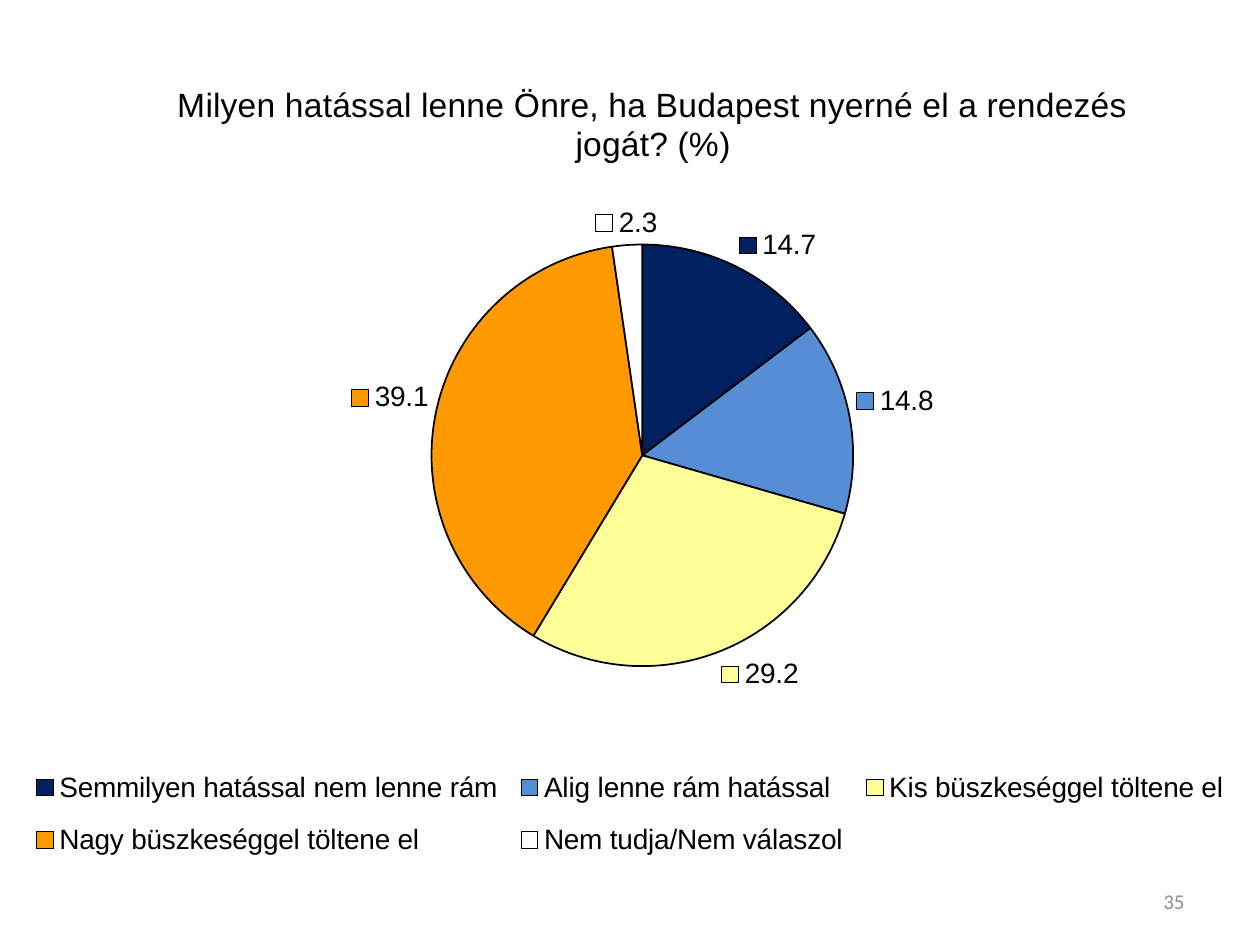
from lxml import etree
from pptx import Presentation
from pptx.chart.data import CategoryChartData
from pptx.dml.color import RGBColor
from pptx.enum.chart import XL_CHART_TYPE, XL_LABEL_POSITION, XL_LEGEND_POSITION
from pptx.enum.text import MSO_ANCHOR, PP_ALIGN
from pptx.oxml.ns import qn
from pptx.util import Cm, Pt

PIE = XL_CHART_TYPE.PIE
OUTSIDE_END = XL_LABEL_POSITION.OUTSIDE_END
BOTTOM = XL_LEGEND_POSITION.BOTTOM
MIDDLE = MSO_ANCHOR.MIDDLE
RIGHT = PP_ALIGN.RIGHT


def color(value):
    return RGBColor.from_string(value)


def place(element, index, **settings):
    for old_layout in element.findall(qn("c:layout")):
        element.remove(old_layout)
    layout = etree.Element(qn("c:layout"))
    manual = etree.SubElement(layout, qn("c:manualLayout"))
    for name, value in settings.items():
        etree.SubElement(manual, qn(f"c:{name}")).set("val", str(value))
    element.insert(index, layout)


answers = [
    ("Semmilyen hatással nem lenne rám", 14.7, "002060"),
    ("Alig lenne rám hatással", 14.8, "558ED5"),
    ("Kis büszkeséggel töltene el", 29.2, "FFFF99"),
    ("Nagy büszkeséggel töltene el", 39.1, "FF9900"),
    ("Nem tudja/Nem válaszol", 2.3, "FFFFFF"),
]

presentation = Presentation()
presentation.slide_width = Cm(25.4)
presentation.slide_height = Cm(19.05)
slide = presentation.slides.add_slide(presentation.slide_layouts[6])

number_box = slide.shapes.add_textbox(Cm(18.2), Cm(17.66), Cm(5.93), Cm(1.01))
text_frame = number_box.text_frame
text_frame.word_wrap = True
text_frame.vertical_anchor = MIDDLE
paragraph = text_frame.paragraphs[0]
paragraph.alignment = RIGHT
run = paragraph.add_run()
run.text = "35"
run.font.size = Pt(12)
run.font.name = "Calibri"
run.font.color.rgb = color("8C8C8C")

chart_data = CategoryChartData(number_format="###0.0")
chart_data.categories = [answer for answer, share, fill in answers]
chart_data.add_series("Series 1", [share for answer, share, fill in answers])
chart = slide.shapes.add_chart(
    PIE, Cm(0.2), Cm(1.02), Cm(25), Cm(17), chart_data
).chart
chart.font.size = Pt(16)
chart.font.name = "Arial"
chart.font.color.rgb = color("000000")

chart.has_title = True
title = chart.chart_title
title.include_in_layout = False
run = title.text_frame.paragraphs[0].add_run()
run.text = "Milyen hatással lenne Önre, ha Budapest nyerné el a rendezés jogát? (%)"
run.font.size = Pt(19.2)
run.font.name = "Arial"
run.font.bold = False
run.font.color.rgb = color("000000")
place(title._element, 1, xMode="edge", yMode="edge", x=0.13, y=0.03)

chart.has_legend = True
legend = chart.legend
legend.position = BOTTOM
legend.include_in_layout = False
place(legend._element, 1, xMode="edge", yMode="edge", x=0.01, y=0.83, w=0.98, h=0.15)

plot = chart.plots[0]
plot.vary_by_categories = True
place(
    chart._chartSpace.chart.plotArea, 0, layoutTarget="inner",
    xMode="edge", yMode="edge", x=0.08, y=0.23, w=0.86, h=0.5,
)

series = plot.series[0]
for index, (answer, share, fill) in enumerate(answers):
    slice_format = series.points[index].format
    slice_format.fill.solid()
    slice_format.fill.fore_color.rgb = color(fill)
    slice_format.line.color.rgb = color("000000")
    slice_format.line.width = Pt(1)

labels = series.data_labels
labels.show_value = True
labels.show_percentage = False
labels.show_legend_key = True
labels.position = OUTSIDE_END
labels.number_format = "###0.0"
labels.number_format_is_linked = False

presentation.save("out.pptx")
